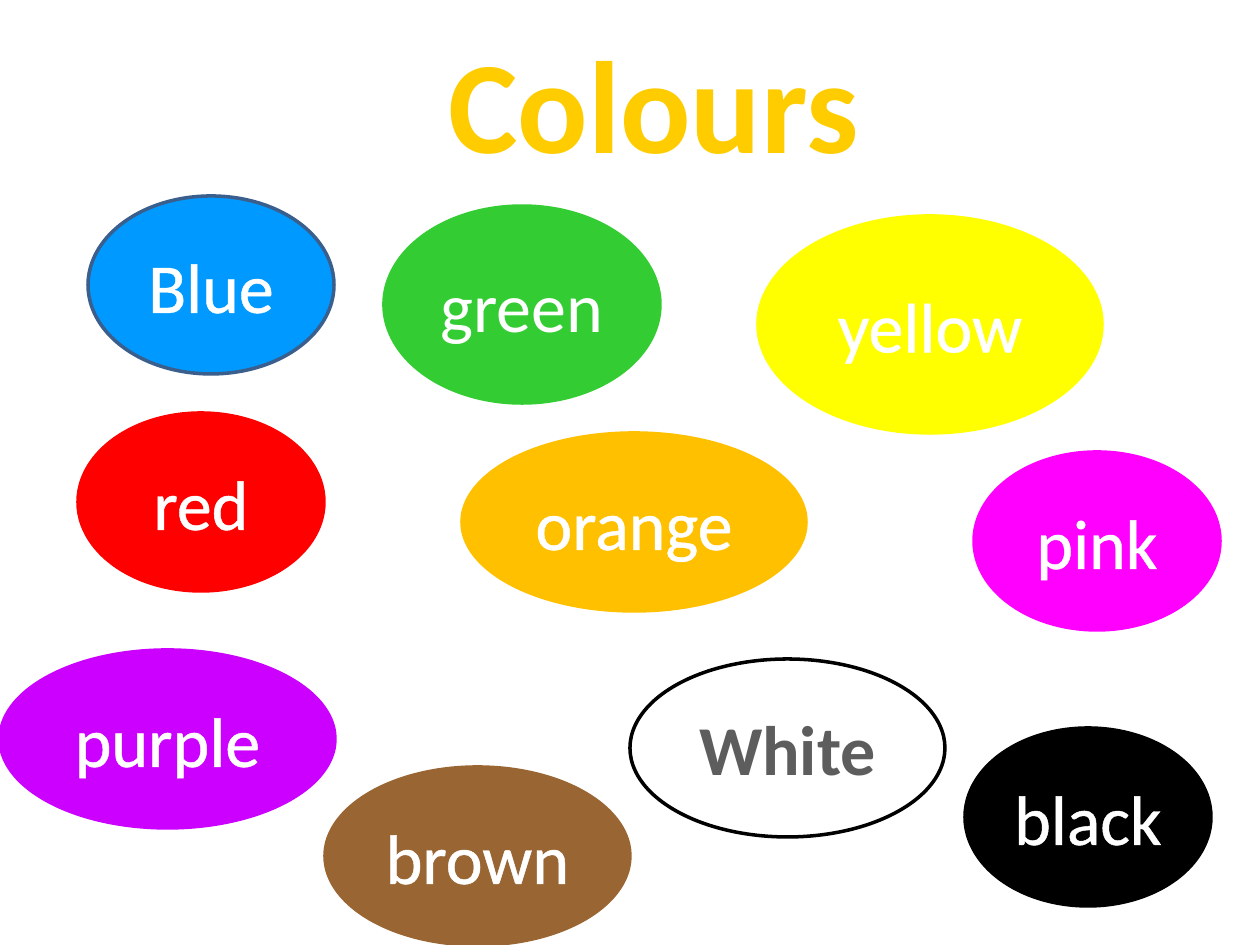
import pptx
import pptx.dml.color
import pptx.enum.shapes
import pptx.enum.text
import pptx.oxml
import pptx.oxml.ns
import pptx.util
from dataclasses import dataclass

PX = 914400 / 126  # EMU in one px


@dataclass(frozen=True)
class Theme:
    face: str = "Calibri"
    head: int = 75
    word: int = 40
    gold: str = "FFCC00"
    light: str = "FFFFFF"
    dark: str = "000000"
    edge: float = 2
    rim: float = 1.45
    rim_bold: float = 1.4
    fade: tuple = ((0, "555555"), (49, "5D5D5D"), (50, "000000"),
                   (95, "000000"), (100, "000000"))


THEME = Theme()

# word, box in px, fill, line, text style
OVALS = [
    ("Blue", (88, 196, 246, 178), "0099FF", "3A5F8C", "rim"),
    ("green", (384, 206, 276, 197), "33CC33", "33CC33", "plain"),
    ("yellow", (758, 216, 344, 217), "FFFF00", "FFFF00", "rim"),
    ("red", (78, 413, 246, 178), "FF0000", "FF0000", "rim"),
    ("orange", (462, 433, 344, 178), "FFC000", "FFC000", "rim"),
    ("pink", (974, 452, 246, 178), "FF00FF", "FF00FF", "rim"),
    ("purple", (0, 650, 335, 178), "CC00FF", "CC00FF", "rim"),
    ("brown", (325, 767, 305, 178), "996633", "996633", "rim"),
    ("White", (630, 659, 315, 178), None, THEME.dark, "fade"),
    ("black", (965, 728, 246, 178), "000000", "000000", "rim"),
]


def px(num):
    return pptx.util.Emu(round(num * PX))


def rgb(code):
    return pptx.dml.color.RGBColor.from_string(code)


def put(item, form):
    for name, value in form.items():
        setattr(item, name, value)


def place(shape, box):
    names = ("left", "top", "width", "height")
    put(shape, dict(zip(names, map(px, box))))


def write(shape, text, size, tint, bold=False):
    """Set one centred line of text and return its run."""
    frame = shape.text_frame
    put(frame, {"word_wrap": True,
                "auto_size": pptx.enum.text.MSO_AUTO_SIZE.NONE,
                "vertical_anchor": pptx.enum.text.MSO_ANCHOR.MIDDLE})
    para = frame.paragraphs[0]
    para.alignment = pptx.enum.text.PP_ALIGN.CENTER
    run = para.add_run()
    run.text = text
    put(run.font, {"name": THEME.face, "size": pptx.util.Pt(size), "bold": bold})
    run.font.color.rgb = rgb(tint)
    return run


def parse(xml):
    return pptx.oxml.parse_xml(
        xml.replace(">", f" {pptx.oxml.ns.nsdecls('a')}>", 1))


def add_rim(run, width):
    """Outline the letters."""
    wide = pptx.util.Pt(width)
    run.font.fill  # the outline goes ahead of the fill
    run._r.get_or_add_rPr().insert(0, parse(
        f'<a:ln w="{wide}"><a:solidFill><a:srgbClr val="{THEME.light}"/>'
        '</a:solidFill><a:prstDash val="solid"/></a:ln>'))


def add_fade(run):
    """Swap the solid letter fill for a gradient."""
    stops = "".join(f'<a:gs pos="{pos * 1000}"><a:srgbClr val="{code}"/></a:gs>'
                    for pos, code in THEME.fade)
    props = run._r.get_or_add_rPr()
    solid = props.find(pptx.oxml.ns.qn("a:solidFill"))
    props.replace(solid, parse(
        f'<a:gradFill><a:gsLst>{stops}</a:gsLst>'
        '<a:lin ang="5400000" scaled="0"/></a:gradFill>'))


def add_title(slide, box):
    title = slide.shapes.title
    place(title, box)
    write(title, "Colours", THEME.head, THEME.gold, True)


def add_oval(slide, box, word, fill, line, style):
    oval = slide.shapes.add_shape(
        pptx.enum.shapes.MSO_SHAPE.OVAL, *map(px, box))
    oval.shadow.inherit = False
    if fill:
        oval.fill.solid()
        oval.fill.fore_color.rgb = rgb(fill)
    else:
        oval.fill.background()
    oval.line.color.rgb = rgb(line)
    oval.line.width = pptx.util.Pt(THEME.edge)
    fade = style == "fade"
    run = write(oval, word, THEME.word, THEME.light, fade)
    if fade:
        add_fade(run)
    if style != "plain":
        add_rim(run, THEME.rim_bold if fade else THEME.rim)


def main():
    deck = pptx.Presentation()
    put(deck, {"slide_width": px(1260), "slide_height": px(945)})
    slide = deck.slides.add_slide(deck.slide_layouts[5])

    # Heading
    add_title(slide, (118, 0, 1071, 203))

    # Colour words
    for word, box, fill, line, style in OVALS:
        add_oval(slide, box, word, fill, line, style)

    deck.save("out.pptx")


if __name__ == "__main__":
    main()
